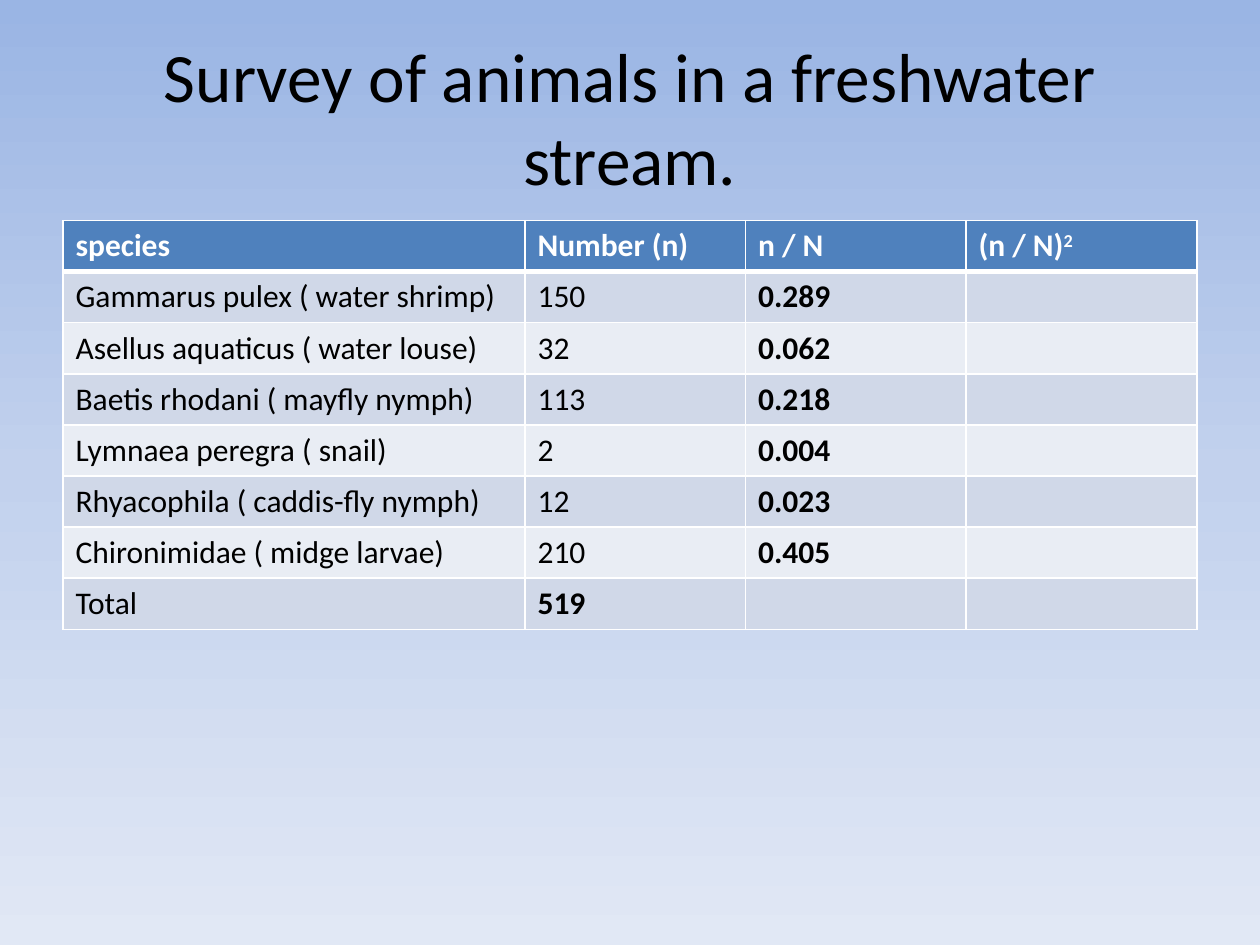
from copy import deepcopy

from lxml.etree import SubElement
from pptx import Presentation
from pptx.dml.color import RGBColor
from pptx.enum.text import MSO_ANCHOR, MSO_AUTO_SIZE, PP_ALIGN
from pptx.oxml.ns import qn
from pptx.util import Pt

FONT = "Calibri"
COLORS = {
    "sky_top": "9AB5E4",
    "sky_middle": "C2D1ED",
    "sky_bottom": "E1E8F5",
    "header": "4F81BD",
    "odd_row": "D0D8E8",
    "even_row": "E9EDF4",
    "white": "FFFFFF",
    "black": "000000",
}
COLUMN_WIDTHS = [264, 126, 126, 132]
ROW_HEIGHT = 29.2
HEADINGS = ["species", "Number (n)", "n / N", "(n / N)"]
SURVEY = [
    ("Gammarus pulex ( water shrimp)", "150", "0.289"),
    ("Asellus aquaticus ( water louse)", "32", "0.062"),
    ("Baetis rhodani ( mayfly nymph)", "113", "0.218"),
    ("Lymnaea peregra ( snail)", "2", "0.004"),
    ("Rhyacophila ( caddis-fly nymph)", "12", "0.023"),
    ("Chironimidae ( midge larvae)", "210", "0.405"),
    ("Total", "519", ""),
]
BOLD_VALUES = {"519"}


def rgb(name):
    return RGBColor.from_string(COLORS[name])


def paint_background(slide):
    fill = slide.background.fill
    fill.gradient()
    fill.gradient_angle = 270
    stop_list = slide.element.find(".//" + qn("a:gsLst"))
    stop_list.insert(1, deepcopy(stop_list[0]))
    sky = [("sky_top", 0), ("sky_middle", 0.5), ("sky_bottom", 1)]
    for stop, (color, position) in zip(fill.gradient_stops, sky):
        stop.color.rgb = rgb(color)
        stop.position = position


def add_run(paragraph, text, size, color="black", bold=False):
    run = paragraph.add_run()
    run.text = text
    run.font.name = FONT
    run.font.size = Pt(size)
    run.font.bold = bold
    run.font.color.rgb = rgb(color)
    return run


def write_title(slide, text):
    title = slide.shapes.title
    title.left, title.top, title.width, title.height = (
        Pt(36), Pt(21.6), Pt(648), Pt(90))
    frame = title.text_frame
    frame.auto_size = MSO_AUTO_SIZE.NONE
    frame.word_wrap = True
    frame.vertical_anchor = MSO_ANCHOR.MIDDLE
    frame.paragraphs[0].alignment = PP_ALIGN.CENTER
    add_run(frame.paragraphs[0], text, 39.6)


def style_cell(cell, fill, top=1, bottom=1):
    """Fill the cell and draw its white borders; top and bottom are widths."""
    properties = cell._tc.get_or_add_tcPr()
    for side, width in (("L", 1), ("R", 1), ("T", top), ("B", bottom)):
        line = SubElement(properties, qn(f"a:ln{side}"), w=str(Pt(width)))
        solid = SubElement(line, qn("a:solidFill"))
        SubElement(solid, qn("a:srgbClr"), val=COLORS["white"])
    cell.fill.solid()
    cell.fill.fore_color.rgb = rgb(fill)


def fill_header(table):
    for column, heading in enumerate(HEADINGS):
        cell = table.cell(0, column)
        style_cell(cell, "header", bottom=3)
        add_run(cell.text_frame.paragraphs[0], heading, 18, "white", True)
    squared = add_run(cell.text_frame.paragraphs[0], "2", 18, "white", True)
    squared.font._element.set("baseline", "30000")


def fill_survey_row(table, row, values):
    for column in range(len(HEADINGS)):
        cell = table.cell(row, column)
        style_cell(cell, "odd_row" if row % 2 else "even_row",
                   top=3 if row == 1 else 1)
        if column < len(values) and values[column]:
            bold = column == 2 or values[column] in BOLD_VALUES
            add_run(cell.text_frame.paragraphs[0], values[column], 18,
                    bold=bold)


def add_survey_table(slide):
    row_count = len(SURVEY) + 1
    table = slide.shapes.add_table(
        row_count, len(HEADINGS), Pt(36), Pt(126),
        Pt(sum(COLUMN_WIDTHS)), Pt(ROW_HEIGHT * row_count)).table
    for column, width in zip(table.columns, COLUMN_WIDTHS):
        column.width = Pt(width)
    for row in table.rows:
        row.height = Pt(ROW_HEIGHT)
    fill_header(table)
    for row, values in enumerate(SURVEY, start=1):
        fill_survey_row(table, row, values)


def main():
    presentation = Presentation()
    presentation.slide_width, presentation.slide_height = Pt(720), Pt(540)
    slide = presentation.slides.add_slide(presentation.slide_layouts[5])
    paint_background(slide)
    write_title(slide, "Survey of animals in a freshwater stream.")
    add_survey_table(slide)
    presentation.save("out.pptx")


if __name__ == "__main__":
    main()
